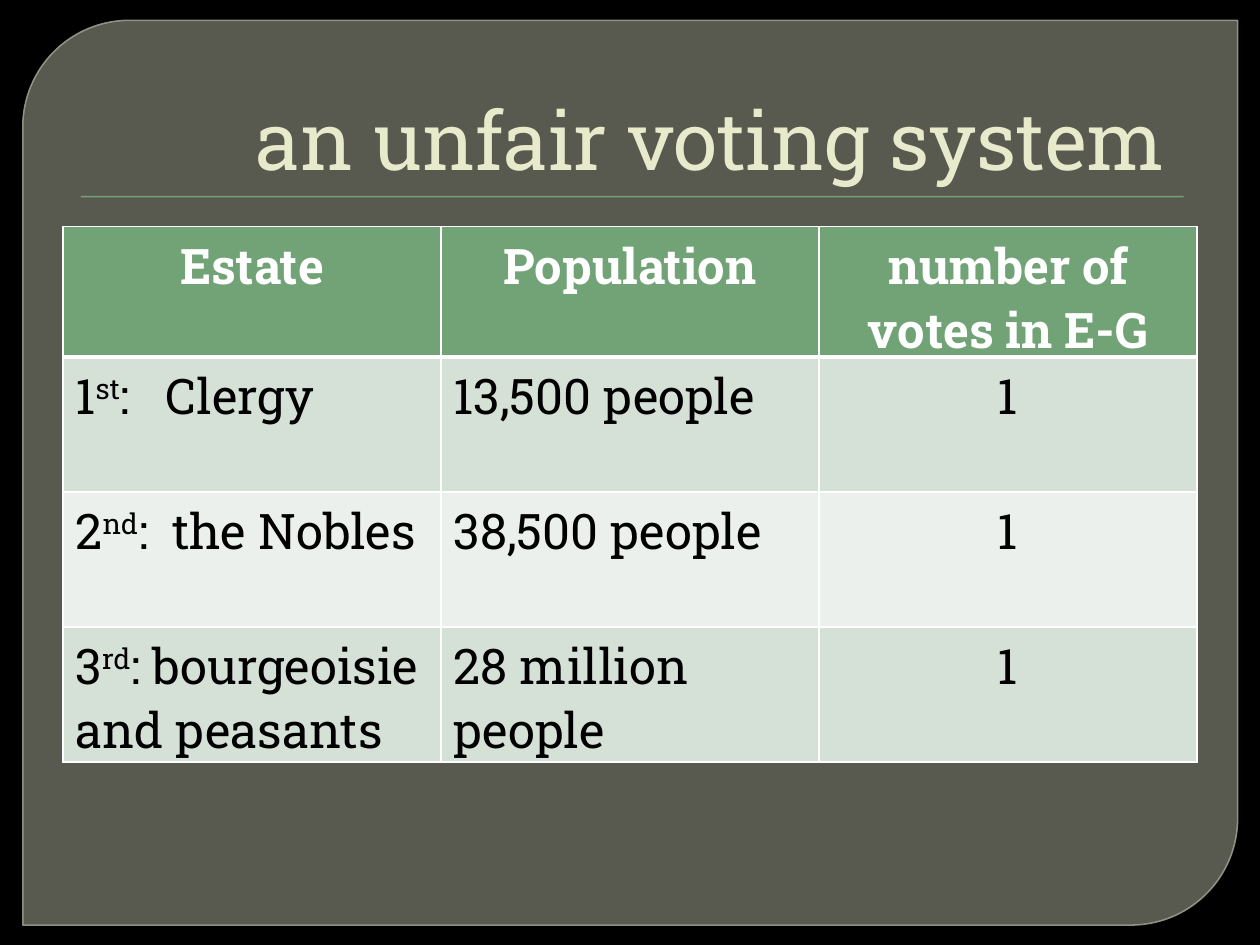
from lxml import etree
from pptx import Presentation
from pptx.dml.color import RGBColor
from pptx.enum import shapes, text
from pptx.oxml import ns
from pptx.util import Cm, Pt

TITLE = "an unfair voting system "
HEADERS = ["Estate", "Population", "number of votes in E-G"]
ESTATES = [
    (("1", "st", ":\tClergy"), "13,500 people", "1"),
    (("2", "nd", ":\tthe Nobles"), "38,500 people", "1"),
    (("3", "rd", ": bourgeoisie and peasants"), "28 million people", "1"),
]
NAME_TABS = [1.82, 1.95, None]
COL_WIDTH, HEADER_HEIGHT, ROW_HEIGHT = 7.62, 1.78, 2.72

THEME = {
    "font": "Roboto Slab", "title_size": 46, "table_size": 28,
    "back": "000000", "panel": "888B7B", "edge": "9DA090",
    "accent": "72A376", "title": "E7EACB", "grid": "FFFFFF",
    "head_text": "FFFFFF", "body_text": "000000",
    "bands": ["D5E0D6", "EBF0EC"],
}


def rgb(name):
    return RGBColor.from_string(THEME.get(name, name))


def box(*cm):
    return [Cm(v) for v in cm]


def set_alpha(fill, percent):
    color = fill._xPr.find(".//" + ns.qn("a:srgbClr"))
    etree.SubElement(color, ns.qn("a:alpha"), val=str(percent * 1000))


def add_run(p, words, size, color, bold=False, baseline=0):
    r = p.add_run()
    r.text = words
    r.font.name, r.font.size, r.font.bold = THEME["font"], Pt(size), bold
    r.font.color.rgb = rgb(color)
    if baseline:
        r.font._element.set("baseline", str(baseline * 1000))


def add_tab(p, cm):
    tabs = etree.SubElement(p._p.get_or_add_pPr(), ns.qn("a:tabLst"))
    etree.SubElement(tabs, ns.qn("a:tab"), pos=str(Cm(cm)), algn="l")


def set_borders(cell, widths):
    tc_pr = cell._tc.get_or_add_tcPr()
    for i, (side, width) in enumerate(zip("LRTB", widths)):
        ln = etree.Element(ns.qn(f"a:ln{side}"), w=str(Pt(width)))
        fill = etree.SubElement(ln, ns.qn("a:solidFill"))
        etree.SubElement(fill, ns.qn("a:srgbClr"), val=THEME["grid"])
        tc_pr.insert(i, ln)


def add_background(s):
    s.background.fill.solid()
    s.background.fill.fore_color.rgb = rgb("back")
    panel = s.shapes.add_shape(
        shapes.MSO_SHAPE.ROUND_2_DIAG_RECTANGLE, *box(0.46, 0.41, 24.49, 18.24))
    panel.adjustments[0], panel.adjustments[1] = 0.118, 0
    rule = s.shapes.add_shape(shapes.MSO_SHAPE.RECTANGLE, *box(1.63, 3.95, 22.23, 0.03))
    for sp, color in ((panel, "panel"), (rule, "accent")):
        sp.shadow.inherit = False
        sp.fill.solid()
        sp.fill.fore_color.rgb = rgb(color)
    set_alpha(panel.fill, 65)
    panel.line.color.rgb = rgb("edge")
    panel.line.width = Pt(0.87)
    set_alpha(panel.line.fill, 88)
    rule.line.fill.background()


def add_title(s):
    tf = s.shapes.add_textbox(*box(1.27, 0.71, 22.86, 3.18)).text_frame
    tf.word_wrap = True
    tf.vertical_anchor = text.MSO_ANCHOR.BOTTOM
    p = tf.paragraphs[0]
    p.alignment = text.PP_ALIGN.RIGHT
    add_run(p, TITLE, THEME["title_size"], "title")


def add_votes_table(s):
    rows = [HEADERS] + ESTATES
    heights = [HEADER_HEIGHT] + [ROW_HEIGHT] * len(ESTATES)
    frame = s.shapes.add_table(
        len(rows), len(HEADERS),
        *box(1.27, 4.57, COL_WIDTH * len(HEADERS), sum(heights)))
    table = frame.table
    for col in table.columns:
        col.width = Cm(COL_WIDTH)
    for i, (row, height) in enumerate(zip(rows, heights)):
        table.rows[i].height = Cm(height)
        header = i == 0
        color = "head_text" if header else "body_text"
        for j, content in enumerate(row):
            cell = table.cell(i, j)
            cell.fill.solid()
            cell.fill.fore_color.rgb = rgb("accent" if header else THEME["bands"][(i - 1) % 2])
            set_borders(cell, (1, 1, 3 if i == 1 else 1, 3 if header else 1))
            p = cell.text_frame.paragraphs[0]
            if header or j == len(row) - 1:
                p.alignment = text.PP_ALIGN.CENTER
            if isinstance(content, tuple):
                if NAME_TABS[i - 1]:
                    add_tab(p, NAME_TABS[i - 1])
                parts = zip(content, (0, 30, 0))
            else:
                parts = [(content, 0)]
            for words, baseline in parts:
                add_run(p, words, THEME["table_size"], color, header, baseline)


def main():
    prs = Presentation()
    prs.slide_width, prs.slide_height = Cm(25.4), Cm(19.05)
    s = prs.slides.add_slide(prs.slide_layouts[6])
    add_background(s)
    add_title(s)
    add_votes_table(s)
    prs.save("out.pptx")


if __name__ == "__main__":
    main()
